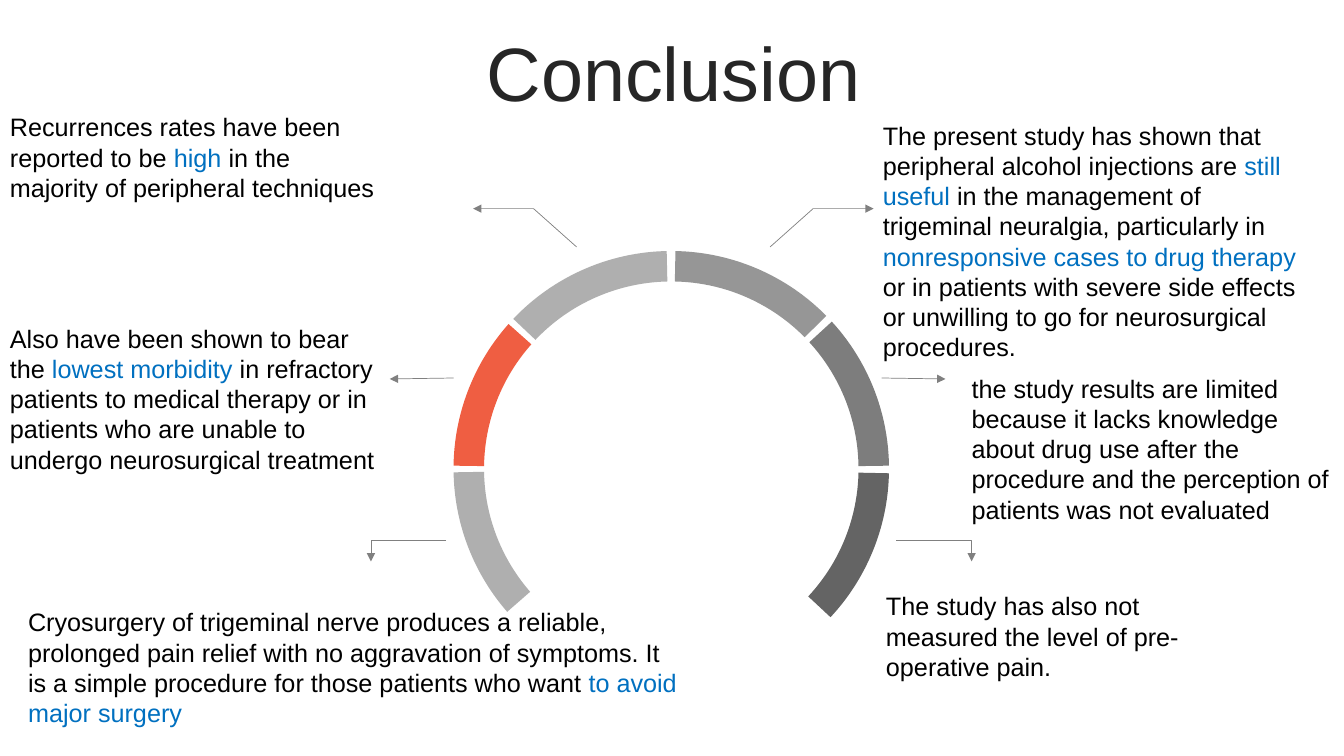
from lxml import etree
from pptx import Presentation, util as u
from pptx.dml import color
from pptx.enum import shapes, text
from pptx.oxml import ns

COLORS = {
    "title": "262626",
    "body": "000000",
    "key": "0070C0",
    "arrow": "808080",
    "light": "AFAFAF",
    "accent": "EF5E42",
    "mid": "969696",
    "dark": "7D7D7D",
    "darkest": "646464",
}

RING_BOX = (33.75, 33.2, 32.4, 57.6)
RING = [
    (1.2, 43, "darkest"),
    (138.9, 179.05, "light"),
    (180.8, 221.65, "accent"),
    (223.5, 268.8, "light"),
    (271.1, 315.4, "mid"),
    (317.5, 359.2, "dark"),
]

# Each pair: right-hand points and the sum of mirrored x positions.
ARROW_PAIRS = [
    ([(57.3, 32.67), (60.5, 27.6), (65, 27.6)], 100.2),
    ([(65.6, 50), (70.35, 50.13)], 99.35),
    ([(66.7, 71.47), (72.3, 71.47), (72.3, 74.27)], 99.9),
]

NOTES = [
    ((64.95, 15.2, 33.45, 33.6), [
        "The present study has shown that peripheral alcohol injections are *still useful *"
        "in the management of trigeminal neuralgia, particularly in "
        "*nonresponsive cases to drug therapy *or in patients with severe side effects "
        "or unwilling to go for neurosurgical procedures."]),
    ((0, 14.13, 29.33, 49.87), [
        "Recurrences rates have been reported to be *high* in the majority of "
        "peripheral techniques",
        "Also have been shown to bear the *lowest morbidity *in refractory patients to "
        "medical therapy or in patients who are unable to undergo neurosurgical treatment"]),
    ((1.35, 79.6, 50.03, 17.47), [
        "Cryosurgery of trigeminal nerve produces a reliable, prolonged pain relief with "
        "no aggravation of symptoms. It is a simple procedure for those patients who want "
        "*to avoid major surgery*"]),
    ((71.55, 48.67, 28.43, 21.6), [
        "the study results are limited because it lacks knowledge about drug use after "
        "the procedure and the perception of patients was not evaluated"]),
    ((65.18, 77.47, 28.05, 13.47), [
        "The study has also not measured the level of pre-operative pain."]),
]


class Deck:
    font = "Arial"
    body_size = u.Pt(18)
    title_size = u.Pt(54)
    paragraph_gap = u.Pt(86)

    def __init__(self, width, height):
        self.prs = Presentation()
        self.prs.slide_width = u.Inches(width)
        self.prs.slide_height = u.Inches(height)
        self.s = self.prs.slides.add_slide(self.prs.slide_layouts[5])

    def at(self, x, y):
        return (round(self.prs.slide_width * x / 100),
                round(self.prs.slide_height * y / 100))

    def box(self, x, y, w, h):
        return self.at(x, y) + self.at(w, h)

    def rgb(self, name):
        return color.RGBColor.from_string(COLORS[name])

    def title(self, words, box):
        sp = self.s.shapes.title
        sp.left, sp.top, sp.width, sp.height = self.box(*box)
        tf = sp.text_frame
        tf.text = words
        tf.vertical_anchor = text.MSO_ANCHOR.MIDDLE
        p = tf.paragraphs[0]
        p.alignment = text.PP_ALIGN.CENTER
        p.line_spacing = 0.9
        p.font.name, p.font.size = self.font, self.title_size
        p.font.color.rgb = self.rgb("title")

    def arc(self, start, end, fill):
        sp = self.s.shapes.add_shape(shapes.MSO_SHAPE.BLOCK_ARC, *self.box(*RING_BOX))
        for i, value in enumerate((start * 0.6, end * 0.6, 0.07)):
            sp.adjustments[i] = value
        sp.fill.solid()
        sp.fill.fore_color.rgb = self.rgb(fill)
        sp.line.fill.background()
        sp.shadow.inherit = False

    def arrow(self, points):
        first, *rest = [self.at(*point) for point in points]
        if len(rest) == 1:
            sp = self.s.shapes.add_connector(
                shapes.MSO_CONNECTOR.STRAIGHT, *first, *rest[0])
        else:
            builder = self.s.shapes.build_freeform(*first)
            builder.add_line_segments(rest, close=False)
            sp = builder.convert_to_shape()
            sp.fill.background()
        sp.line.color.rgb = self.rgb("arrow")
        sp.line.width = u.Pt(0.5)
        properties = sp.element.spPr
        etree.SubElement(properties.find(ns.qn("a:ln")), ns.qn("a:tailEnd"), type="triangle")
        etree.SubElement(properties, ns.qn("a:effectLst"))

    def note(self, box, paragraphs):
        tf = self.s.shapes.add_textbox(*self.box(*box)).text_frame
        tf.word_wrap = True
        tf.auto_size = text.MSO_AUTO_SIZE.SHAPE_TO_FIT_TEXT
        for i, words in enumerate(paragraphs):
            p = tf.add_paragraph() if i else tf.paragraphs[0]
            p.font.name, p.font.size = self.font, self.body_size
            if i:
                p.space_before = self.paragraph_gap
            for j, part in enumerate(words.split("*")):
                if part:
                    r = p.add_run()
                    r.text = part
                    r.font.color.rgb = self.rgb("key" if j % 2 else "body")


def main():
    deck = Deck(13.33, 7.5)
    deck.title("Conclusion", (2.63, 4.93, 94.97, 10.53))
    for points, mirror in ARROW_PAIRS:
        deck.arrow(points)
        deck.arrow([(mirror - x, y) for x, y in points])
    for segment in RING:
        deck.arc(*segment)
    for box, paragraphs in NOTES:
        deck.note(box, paragraphs)
    deck.prs.save("out.pptx")


if __name__ == "__main__":
    main()
